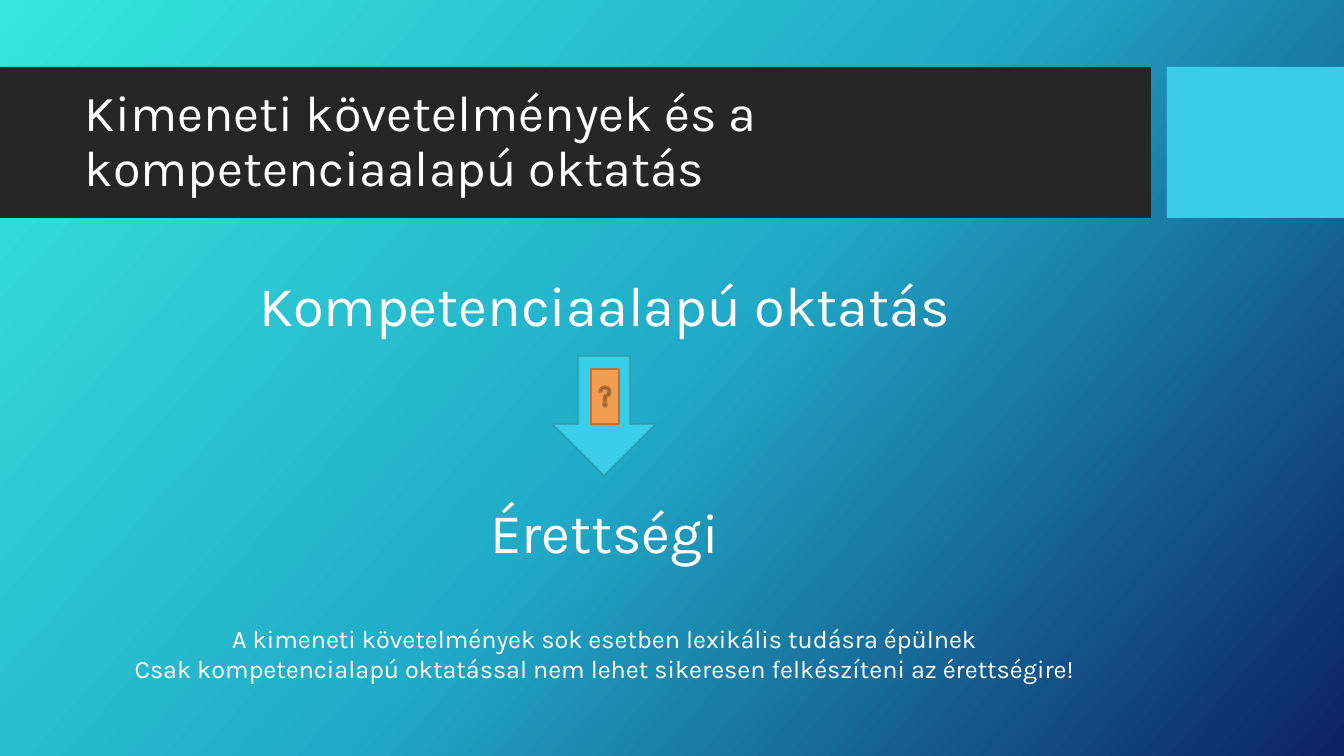
import copy
import pptx
import pptx.util
import pptx.dml.color
import pptx.enum.shapes
import pptx.enum.text

Color = pptx.dml.color.RGBColor
Kind = pptx.enum.shapes.MSO_SHAPE
Align = pptx.enum.text.PP_ALIGN
Anchor = pptx.enum.text.MSO_ANCHOR

WHITE = Color(0xFF, 0xFF, 0xFF)
DARK = Color(0x26, 0x26, 0x26)
CYAN = Color(0x39, 0xCD, 0xE7)
TEAL = Color(0x2A, 0x98, 0xAB)
ORANGE = Color(0xF4, 0x9D, 0x50)
BROWN = Color(0xB5, 0x74, 0x3B)
MINT = Color(0x36, 0xE6, 0xDD)
BLUE = Color(0x21, 0xAB, 0xC8)
NAVY = Color(0x0C, 0x22, 0x63)

WIDE, HIGH = 1344, 756
SCALE = 12192000 / WIDE
LEFT, SPAN = 75, 1059  # shared text column

deck = pptx.Presentation()
deck.slide_width = round(WIDE * SCALE)
deck.slide_height = round(HIGH * SCALE)
slide = deck.slides.add_slide(deck.slide_layouts[6])


def add_block(kind, box, fill, line=None):
    block = slide.shapes.add_shape(kind, *[round(n * SCALE) for n in box])
    block.shadow.inherit = False
    block.fill.solid()
    block.fill.fore_color.rgb = fill
    if line is None:
        block.line.fill.background()
    else:
        block.line.color.rgb = line
        block.line.width = pptx.util.Pt(1)
    return block


def add_text(top, high, size, lines, align=Align.CENTER, anchor=Anchor.TOP, gap=1.0):
    box = [round(n * SCALE) for n in (LEFT, top, SPAN, high)]
    frame = slide.shapes.add_textbox(*box).text_frame
    frame.word_wrap = True
    frame.vertical_anchor = anchor
    for i, line in enumerate(lines):
        para = frame.add_paragraph() if i else frame.paragraphs[0]
        para.alignment = align
        para.line_spacing = gap
        run = para.add_run()
        run.text = line
        run.font.name = "Karla"
        run.font.size = pptx.util.Pt(size)
        run.font.color.rgb = WHITE


# Background gradient
back = slide.background.fill
back.gradient()
back.gradient_angle = 360 - 42
stops = slide.element.xpath(".//a:gsLst")[0]
stops.append(copy.deepcopy(stops[0]))
for stop, place, tone in zip(back.gradient_stops, (0, 0.5, 1), (MINT, BLUE, NAVY)):
    stop.position = place
    stop.color.rgb = tone

# Title band
add_block(Kind.RECTANGLE, (0, 67, 1151, 151), DARK)
add_block(Kind.RECTANGLE, (1167, 67, 177, 151), CYAN)
add_text(83, 119, 36, ["Kimeneti követelmények és a kompetenciaalapú oktatás"],
         Align.LEFT, Anchor.MIDDLE, 0.9)

# From teaching to the exam
add_text(260, 80, 40, ["Kompetenciaalapú oktatás"], gap=1.08)
add_text(493, 78, 40, ["Érettségi"])
arrow = add_block(Kind.RIGHT_ARROW, (544, 364, 120, 104), CYAN, TEAL)
arrow.rotation = 90
add_block(Kind.ACTION_BUTTON_HELP, (591, 369, 28, 55), ORANGE, BROWN)

# Closing remark
add_text(618, 72, 18, [
    "A kimeneti követelmények sok esetben lexikális tudásra épülnek",
    "Csak kompetencialapú oktatással nem lehet sikeresen felkészíteni az érettségire!",
])

deck.save("out.pptx")
